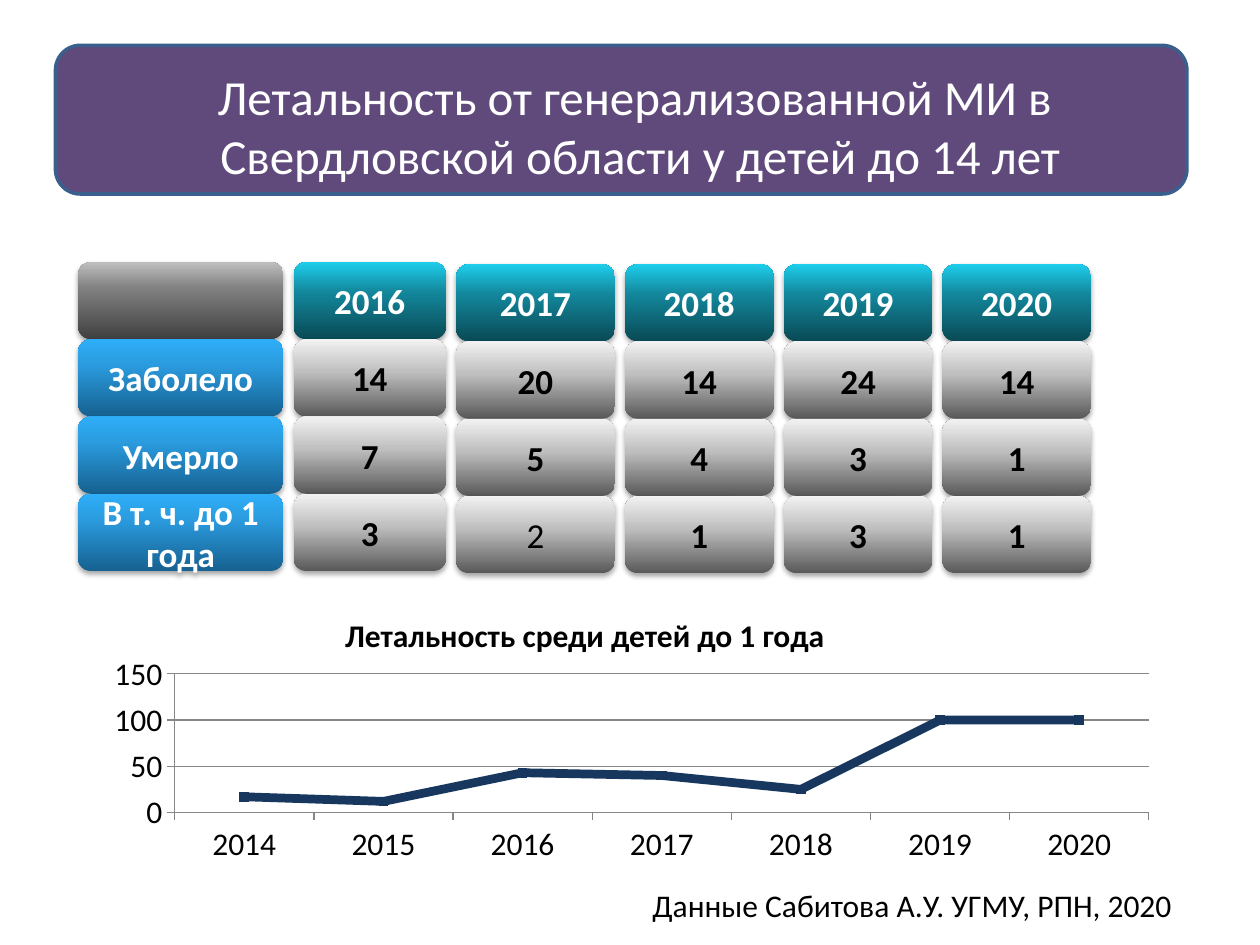
from dataclasses import dataclass
from itertools import accumulate

from lxml import etree
from pptx import Presentation
from pptx.chart.data import CategoryChartData
from pptx.dml.color import RGBColor
from pptx.enum.chart import XL_CHART_TYPE, XL_MARKER_STYLE, XL_TICK_MARK
from pptx.enum.shapes import MSO_SHAPE
from pptx.enum.text import MSO_ANCHOR, PP_ALIGN
from pptx.oxml import parse_xml
from pptx.oxml.ns import nsdecls, qn
from pptx.util import Inches, Pt

ROUND = MSO_SHAPE.ROUNDED_RECTANGLE
LINE = XL_CHART_TYPE.LINE_MARKERS
SQUARE = XL_MARKER_STYLE.SQUARE
OUT = XL_TICK_MARK.OUTSIDE
MIDDLE, TOP = MSO_ANCHOR.MIDDLE, MSO_ANCHOR.TOP
CENTER, LEFT = PP_ALIGN.CENTER, PP_ALIGN.LEFT

FONT = "Calibri"
COLORS = {"white": "FFFFFF", "black": "000000", "banner": "604A7B",
          "edge": "3A5F8C", "curve": "17375E", "grid": "868686"}
# Gradient stops from the bottom of a tile to its top
GRADS = {
    "year": {0: "094A55", 62: "13889D", 100: "1ECEEC"},
    "value": {0: "595959", 58: "BFBFBF", 100: "F2F2F2"},
    "label": {0: "166191", 68: "2B9CDF", 100: "2EAEF9"},
    "corner": {0: "404040", 66: "808080", 100: "BFBFBF"},
}

# The slide is a grid of 100 columns by 75 rows
UNIT = Inches(0.1)
COLS, ROWS = 100, 75


@dataclass
class Box:
    col: float
    row: float
    width: float
    height: float

    def place(self) -> tuple:
        sides = (self.col, self.row, self.width, self.height)
        return tuple(int(side * UNIT) for side in sides)


@dataclass
class Column:
    width: float
    drop: float
    cells: tuple


LABELS = ("", "Заболело", "Умерло", "В т. ч. до 1 года")
COLUMNS = [
    Column(17.1, 0, LABELS),
    Column(12.9, 0, ("2016", "14", "7", "3")),
    Column(13.4, 0.17, ("2017", "20", "5", "2")),
    Column(12.6, 0.17, ("2018", "14", "4", "1")),
    Column(12.6, 0.17, ("2019", "24", "3", "3")),
    Column(12.6, 0.17, ("2020", "14", "1", "1")),
]
PLAIN = (2, 3)  # column and row of the only value that is not bold
START, HEAD, STEP, GAP = 5.8, 20.8, 6.13, 0.8


def rgb(name: str) -> RGBColor:
    return RGBColor.from_string(COLORS[name])


def write(shape, text: str, *, size=20, color="black", bold=False,
          align=CENTER, anchor=MIDDLE, wrap=True) -> None:
    frame = shape.text_frame
    frame.word_wrap = wrap
    frame.vertical_anchor = anchor
    frame.text = text
    for para in frame.paragraphs:
        para.alignment = align
        for run in para.runs:
            font = run.font
            font.name, font.size, font.bold = FONT, Pt(size), bold
            font.color.rgb = rgb(color)


def shade(shape, stops: dict) -> None:
    """Fill with an upward gradient and cast a soft shadow below."""
    shape.fill.gradient()
    shape.fill.gradient_angle = 90
    props = shape._element.spPr
    marks = props.find(".//" + qn("a:gsLst"))
    for old in list(marks):
        marks.remove(old)
    for share, tone in stops.items():
        stop = etree.SubElement(marks, qn("a:gs"), pos=str(share * 1000))
        etree.SubElement(stop, qn("a:srgbClr"), val=tone)
    shape.line.fill.background()
    props.append(parse_xml(
        f'<a:effectLst {nsdecls("a")}><a:outerShdw blurRad="{Pt(3.1)}" '
        f'dist="{Pt(1.8)}" dir="5400000" rotWithShape="0">'
        '<a:srgbClr val="000000"><a:alpha val="35000"/></a:srgbClr>'
        '</a:outerShdw></a:effectLst>'))


def tile(slide, col: int, row: int, left: float) -> None:
    item = COLUMNS[col]
    kind = (("corner", "label"), ("year", "value"))[col > 0][row > 0]
    box = Box(left + GAP / 2, HEAD + item.drop + row * STEP,
              item.width - GAP, STEP)
    shape = slide.shapes.add_shape(ROUND, *box.place())
    shade(shape, GRADS[kind])
    # Margins make up for the gap, so the text keeps the full column
    shape.text_frame.margin_left = shape.text_frame.margin_right = Inches(0.06)
    if item.cells[row]:
        write(shape, item.cells[row], bold=(col, row) != PLAIN,
              color="black" if kind == "value" else "white")


def note(slide, box: Box, text: str, **form) -> None:
    shape = slide.shapes.add_textbox(*box.place())
    write(shape, text, size=18, align=LEFT, anchor=TOP, **form)


def plot(slide, box: Box) -> None:
    data = CategoryChartData()
    data.categories = [str(year) for year in range(2014, 2021)]
    data.add_series("Series 1", (17, 12, 43, 40, 25, 100, 100))
    chart = slide.shapes.add_chart(LINE, *box.place(), data).chart
    chart.has_legend = chart.has_title = False
    chart.font.name, chart.font.size = FONT, Pt(18)
    chart.font.color.rgb = rgb("black")
    chart.plots[0].vary_by_categories = False

    # Axes
    value = chart.value_axis
    value.minimum_scale, value.maximum_scale, value.major_unit = 0, 150, 50
    value.has_major_gridlines = True
    for axis in (chart.category_axis, value):
        axis.major_tick_mark = OUT
    for line in (chart.category_axis.format.line, value.format.line,
                 value.major_gridlines.format.line):
        line.color.rgb = rgb("grid")
        line.width = Pt(0.75)

    # Curve
    curve = chart.plots[0].series[0]
    curve.smooth = False
    curve.format.line.color.rgb = rgb("curve")
    curve.format.line.width = Pt(5)
    mark = curve.marker
    mark.style, mark.size = SQUARE, 5
    mark.format.fill.solid()
    mark.format.fill.fore_color.rgb = rgb("curve")
    mark.format.line.color.rgb = rgb("curve")

    # Inner plot area as shares of the chart
    area = chart._chartSpace.find(".//" + qn("c:plotArea"))
    for old in area.findall(qn("c:layout")):
        area.remove(old)
    area.insert(0, parse_xml(
        f'<c:layout {nsdecls("c")}><c:manualLayout>'
        '<c:layoutTarget val="inner"/><c:xMode val="edge"/>'
        '<c:yMode val="edge"/><c:x val="0.08"/><c:y val="0.11"/>'
        '<c:w val="0.9"/><c:h val="0.64"/>'
        '</c:manualLayout></c:layout>'))


def main() -> None:
    deck = Presentation()
    deck.slide_width, deck.slide_height = COLS * UNIT, ROWS * UNIT
    slide = deck.slides.add_slide(deck.slide_layouts[5])

    # Chart of lethality
    plot(slide, Box(7, 51.6, 85.9, 17.2))

    # Grid of tiles
    lefts = accumulate((item.width for item in COLUMNS), initial=START)
    for col, (item, left) in enumerate(zip(COLUMNS, lefts)):
        for row in range(len(item.cells)):
            tile(slide, col, row, left)

    # Banner with the title on top of it
    banner = slide.shapes.add_shape(ROUND, *Box(4.4, 3.6, 89.8, 11.8).place())
    banner.shadow.inherit = False
    banner.fill.solid()
    banner.fill.fore_color.rgb = rgb("banner")
    banner.line.color.rgb = rgb("edge")
    banner.line.width = Pt(2)
    title = slide.shapes.title
    title.left, title.top, title.width, title.height = Box(
        5.8, 3.7, 90, 12.5).place()
    write(title, "Летальность от генерализованной МИ в \v"
          "Свердловской области у детей до 14 лет", size=28, color="white")
    banner._element.addnext(title._element)

    # Source and chart heading
    note(slide, Box(50.8, 69.8, 45, 4), "Данные Сабитова А.У. УГМУ, РПН, 2020")
    note(slide, Box(26.4, 48.4, 40.4, 4), "Летальность среди детей до 1 года",
         bold=True, wrap=False)
    deck.save("out.pptx")


if __name__ == "__main__":
    main()
